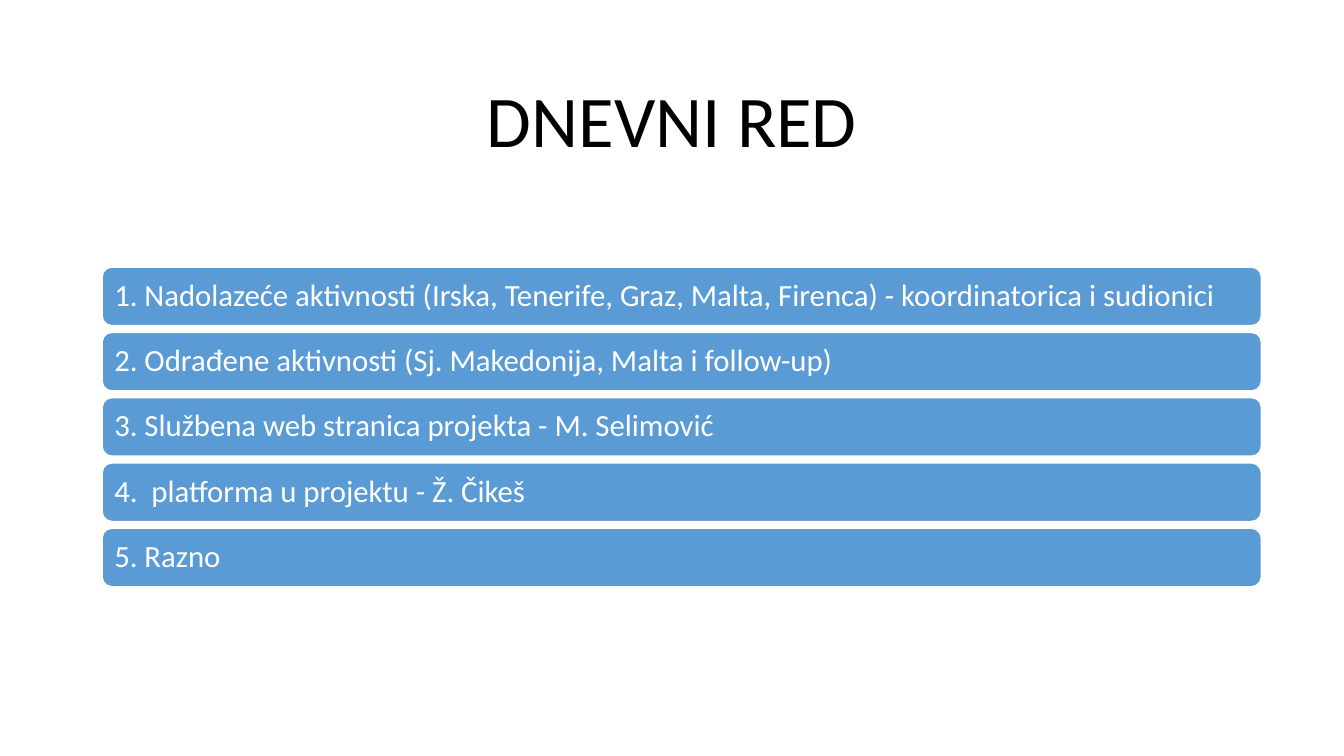
from pptx import Presentation
from pptx.dml.color import RGBColor
from pptx.enum.shapes import MSO_SHAPE
from pptx.enum.text import MSO_ANCHOR, PP_ALIGN
from pptx.util import Pt

COLORS = {"title": "000000", "bar": "5B9BD5", "white": "FFFFFF"}
AGENDA = [
    "1. Nadolazeće aktivnosti (Irska, Tenerife, Graz, Malta, Firenca) - koordinatorica i sudionici",
    "2. Odrađene aktivnosti (Sj. Makedonija, Malta i follow-up)",
    "3. Službena web stranica projekta - M. Selimović",
    "4.  platforma u projektu - Ž. Čikeš",
    "5. Razno",
]
BAR_LEFT, BAR_TOP, BAR_WIDTH, BAR_HEIGHT = 73, 190.8, 828, 41.8
BAR_PITCH = 46.62
BAR_INSET = 6.6


def write_line(shape, text, size, color, align):
    tf = shape.text_frame
    tf.word_wrap = True
    tf.vertical_anchor = MSO_ANCHOR.MIDDLE
    p = tf.paragraphs[0]
    p.alignment = align
    p.line_spacing = 0.9
    r = p.add_run()
    r.text = text
    r.font.size = Pt(size)
    r.font.name = "Calibri"
    r.font.color.rgb = RGBColor.from_string(COLORS[color])


prs = Presentation()
prs.slide_width = Pt(960)
prs.slide_height = Pt(540)
s = prs.slides.add_slide(prs.slide_layouts[6])

title = s.shapes.add_textbox(Pt(66), Pt(44), Pt(828), Pt(89))
write_line(title, "DNEVNI RED", 52, "title", PP_ALIGN.CENTER)

for i, item in enumerate(AGENDA):
    bar = s.shapes.add_shape(
        MSO_SHAPE.ROUNDED_RECTANGLE,
        Pt(BAR_LEFT), Pt(BAR_TOP + i * BAR_PITCH), Pt(BAR_WIDTH), Pt(BAR_HEIGHT),
    )
    bar.shadow.inherit = False
    bar.fill.solid()
    bar.fill.fore_color.rgb = RGBColor.from_string(COLORS["bar"])
    bar.line.color.rgb = RGBColor.from_string(COLORS["white"])
    bar.line.width = Pt(1)
    tf = bar.text_frame
    tf.margin_left = tf.margin_right = Pt(BAR_INSET)
    tf.margin_top = tf.margin_bottom = Pt(BAR_INSET)
    write_line(bar, item, 22, "white", PP_ALIGN.LEFT)

prs.save("out.pptx")
